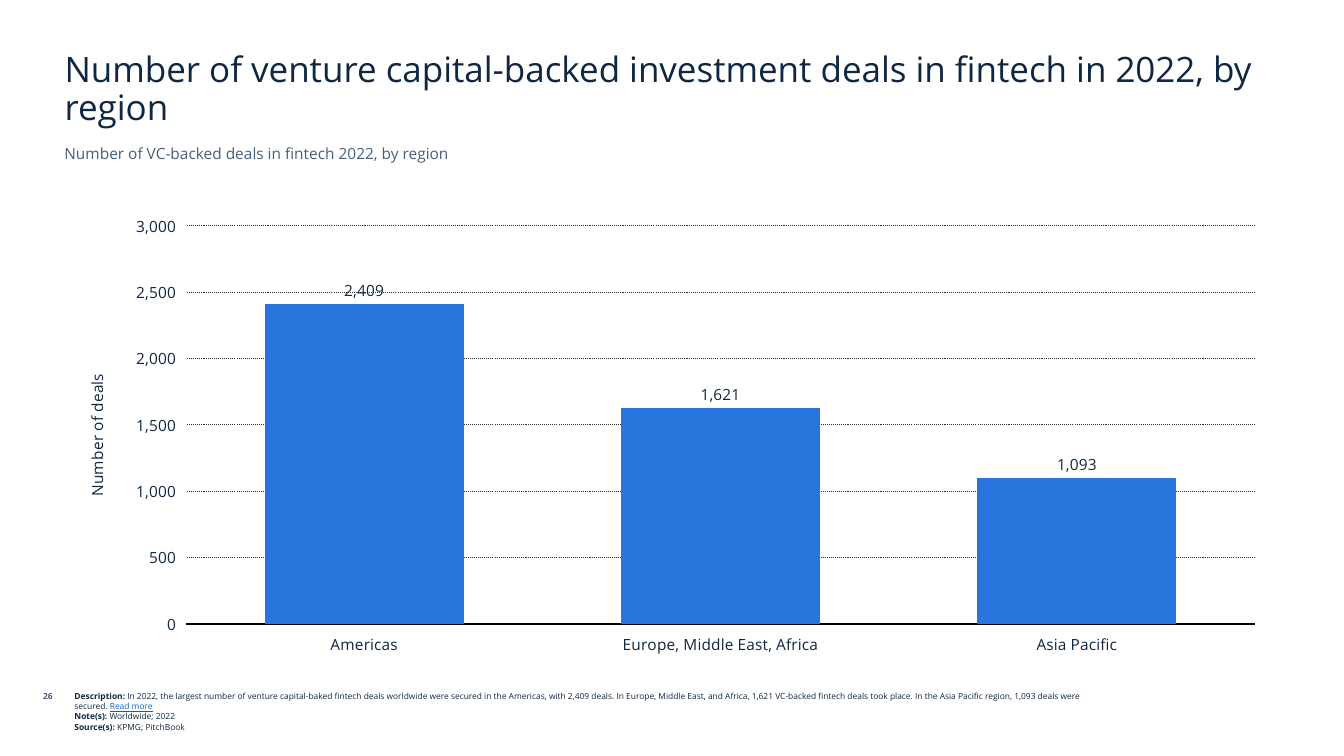
from lxml.etree import SubElement
from pptx import Presentation
from pptx.chart.data import CategoryChartData
from pptx.dml.color import RGBColor
from pptx.enum.chart import XL_CHART_TYPE, XL_LABEL_POSITION, XL_TICK_LABEL_POSITION, XL_TICK_MARK
from pptx.enum.dml import MSO_LINE
from pptx.enum.text import MSO_ANCHOR, MSO_AUTO_SIZE, PP_ALIGN
from pptx.oxml.ns import qn
from pptx.util import Inches, Pt

FONT = "Open Sans"
NAVY, SLATE, BLUE, LINK = "0F2741", "455F7C", "2875DD", "0563C1"
BLACK, GRID = "000000", "2F2F2F"


def color(hex_code):
    return RGBColor.from_string(hex_code)


def style(font, size, hex_code=NAVY, bold=False):
    font.name = FONT
    font.size = Pt(size)
    font.bold = bold
    font.color.rgb = color(hex_code)


def add_run(paragraph, text, size, hex_code=NAVY, bold=False):
    run = paragraph.add_run()
    run.text = text
    style(run.font, size, hex_code, bold)
    return run


def add_text_frame(slide, box):
    frame = slide.shapes.add_textbox(*map(Inches, box)).text_frame
    frame.word_wrap = True
    return frame


def add_heading(slide, box):
    left, top, width, height = box
    # Title
    title = slide.shapes.title
    title.left, title.top = Inches(left), Inches(top)
    title.width, title.height = Inches(width), Inches(0.86)
    frame = title.text_frame
    frame.word_wrap = True
    frame.auto_size = MSO_AUTO_SIZE.NONE
    frame.vertical_anchor = MSO_ANCHOR.BOTTOM
    heading = frame.paragraphs[0]
    heading.alignment = PP_ALIGN.LEFT
    heading.line_spacing = 0.9
    heading.space_before = Pt(0)
    add_run(heading, "Number of venture capital-backed investment deals in fintech in 2022, by region", 25)
    # Subtitle
    subtitle = add_text_frame(slide, (left, top + height - 0.34, width, 0.34))
    add_run(subtitle.paragraphs[0], "Number of VC-backed deals in fintech 2022, by region", 11, SLATE)


def set_plot_area(chart, **fractions):
    plot_area = chart._chartSpace.chart.plotArea
    layout = plot_area.find(qn("c:layout"))
    if layout is None:
        layout = SubElement(plot_area, qn("c:layout"))
        plot_area.insert(0, layout)
    manual = SubElement(layout, qn("c:manualLayout"))
    settings = {"layoutTarget": "inner", "xMode": "edge", "yMode": "edge", **fractions}
    for tag, value in settings.items():
        SubElement(manual, qn(f"c:{tag}")).set("val", str(value))


def add_deals_chart(slide, box):
    deals = CategoryChartData(number_format="#,##0")
    deals.categories = ["Americas", "Europe, Middle East, Africa", "Asia Pacific"]
    deals.add_series("Number of deals", (2409, 1621, 1093))
    chart = slide.shapes.add_chart(
        XL_CHART_TYPE.COLUMN_CLUSTERED, *map(Inches, box), deals).chart
    chart.has_legend = False
    chart.has_title = False
    style(chart.font, 11)
    set_plot_area(chart, x=0.1, y=0.04, w=0.88, h=0.87)

    # Axes
    regions, counts = chart.category_axis, chart.value_axis
    for axis in (regions, counts):
        axis.major_tick_mark = axis.minor_tick_mark = XL_TICK_MARK.NONE
        axis.tick_label_position = XL_TICK_LABEL_POSITION.LOW
        style(axis.tick_labels.font, 11)
    regions.format.line.color.rgb = color(BLACK)
    regions.format.line.width = Pt(2)
    counts.format.line.fill.background()
    counts.minimum_scale, counts.maximum_scale, counts.major_unit = 0, 3000, 500
    counts.tick_labels.number_format = "#,##0"
    counts.tick_labels.number_format_is_linked = False
    grid = counts.major_gridlines.format.line
    grid.color.rgb = color(GRID)
    grid.width = Pt(0.75)
    grid.dash_style = MSO_LINE.ROUND_DOT
    add_run(counts.axis_title.text_frame.paragraphs[0], "Number of deals", 11)

    # Columns and their values
    plot = chart.plots[0]
    plot.gap_width, plot.overlap = 80, -30
    plot.vary_by_categories = False
    columns = plot.series[0]
    columns.format.fill.solid()
    columns.format.fill.fore_color.rgb = color(BLUE)
    columns.format.line.color.rgb = color(BLUE)
    columns.format.line.width = Pt(0.75)
    labels = columns.data_labels
    labels.show_value = True
    labels.position = XL_LABEL_POSITION.OUTSIDE_END
    labels.number_format = "#,##0"
    labels.number_format_is_linked = False
    style(labels.font, 11)


def add_footer(slide, box):
    left, top, width, height = box
    # Page number
    number_width = 0.62
    page = add_text_frame(slide, (left, top, number_width, 0.3)).paragraphs[0]
    page.alignment = PP_ALIGN.RIGHT
    add_run(page, "26", 6, SLATE, bold=True)
    # Description, notes and sources
    notes = [
        ("Description: ", "In 2022, the largest number of venture capital-baked fintech deals worldwide "
         "were secured in the Americas, with 2,409 deals. In Europe, Middle East, and Africa, 1,621 "
         "VC-backed fintech deals took place. In the Asia Pacific region, 1,093 deals were secured. "),
        ("Note(s): ", "Worldwide; 2022"),
        ("Source(s): ", "KPMG; PitchBook"),
    ]
    notes_left = left + number_width + 0.02
    frame = add_text_frame(slide, (notes_left, top, width - notes_left + left, height))
    for index, (label, text) in enumerate(notes):
        note = frame.add_paragraph() if index else frame.paragraphs[0]
        add_run(note, label, 6, bold=True)
        add_run(note, text, 6)
    read_more = add_run(frame.paragraphs[0], "Read more", 6, LINK)
    read_more.font.underline = True


def main():
    deck = Presentation()
    deck.slide_width, deck.slide_height = Inches(13.33), Inches(7.5)
    slide = deck.slides.add_slide(deck.slide_layouts.get_by_name("Title Only"))
    add_heading(slide, (0.54, 0.46, 12.24, 1.26))
    add_deals_chart(slide, (0.64, 2.06, 12.05, 4.54))
    add_footer(slide, (0, 6.81, 11.11, 0.58))
    deck.save("out.pptx")


if __name__ == "__main__":
    main()
